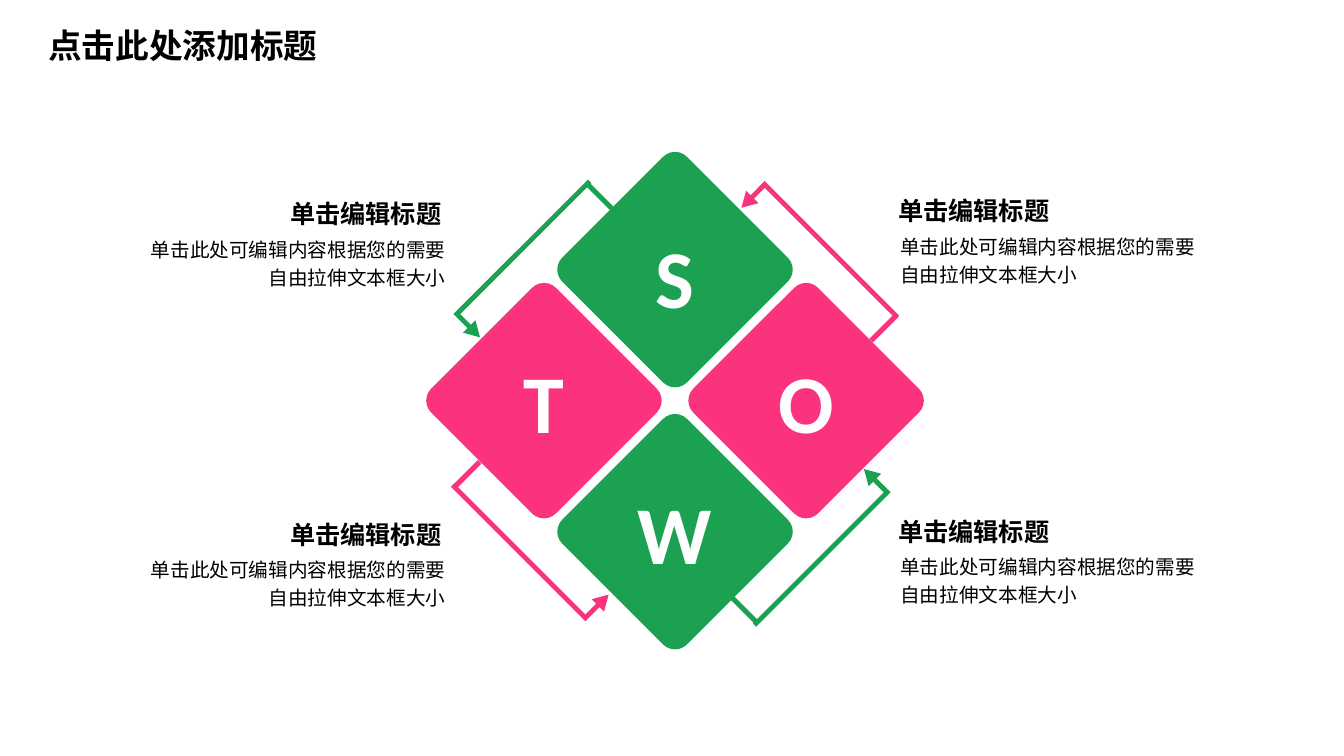
from lxml.etree import SubElement
from pptx import Presentation
from pptx.dml.color import RGBColor
from pptx.enum.shapes import MSO_SHAPE
from pptx.enum.text import MSO_ANCHOR, MSO_AUTO_SIZE, PP_ALIGN
from pptx.oxml.ns import qn
from pptx.util import Inches, Pt

GREEN, PINK, WHITE, BLACK = "1BA151", "FB337F", "FFFFFF", "000000"
CJK = "Noto Sans CJK SC"
SIDE, STEP = 1.75, 1.3


def rgb(value):
    """Turn a hex string into a colour."""
    return RGBColor.from_string(value)


def write(shape, text, size, color=BLACK, bold=False, font=CJK, align=PP_ALIGN.LEFT):
    """Put one formatted paragraph in a shape and return the paragraph."""
    tf = shape.text_frame
    tf.word_wrap = True
    tf.text = text
    p = tf.paragraphs[0]
    p.alignment = align
    r = p.runs[0]
    r.font.size, r.font.bold, r.font.name = Pt(size), bold, font
    r.font.color.rgb = rgb(color)
    SubElement(r.font._element, qn("a:ea")).set("typeface", font)
    return p


def add_textbox(s, box, inset=True):
    """Add a text box, with or without inner margins."""
    tb = s.shapes.add_textbox(*map(Inches, box))
    if not inset:
        tf = tb.text_frame
        tf.margin_left = tf.margin_right = tf.margin_top = tf.margin_bottom = 0
    return tb


def add_turned(s, kind, cx, cy, w, h, angle, color, adjust=(), flip=None):
    """Add a rotated solid shape around a centre point."""
    sp = s.shapes.add_shape(kind, Inches(cx - w / 2), Inches(cy - h / 2), Inches(w), Inches(h))
    sp.rotation = angle
    sp.shadow.inherit = False
    sp.fill.solid()
    sp.fill.fore_color.rgb = rgb(color)
    sp.line.fill.background()
    for i, value in enumerate(adjust):
        sp.adjustments[i] = value
    if flip:
        sp.element.spPr.xfrm.set(flip, "1")


def add_title(s, box):
    """Place the slide title."""
    title = s.shapes.title
    title.left, title.top, title.width, title.height = map(Inches, box)
    write(title, "点击此处添加标题", 24, bold=True)
    title.text_frame.vertical_anchor = MSO_ANCHOR.TOP
    title.text_frame.auto_size = MSO_AUTO_SIZE.NONE


def add_bent_arrow(s, center, tail, angle, flip, color):
    """Draw a bent arrow and its short tail, offset from the centre."""
    cx, cy = center
    add_turned(s, MSO_SHAPE.BENT_ARROW, cx, cy, 0.35, 1.95, angle, color,
               (0.137, 0.25, 0.436, 0), flip)
    add_turned(s, MSO_SHAPE.RECTANGLE, cx + tail[0], cy + tail[1], 0.35, 0.05, angle, color)


def add_diamond(s, cx, cy, letter, drop, color):
    """Draw one rounded diamond with its letter."""
    add_turned(s, MSO_SHAPE.ROUNDED_RECTANGLE, cx, cy, SIDE, SIDE, 45, color, (0.096,))
    tb = add_textbox(s, (cx - 0.4, cy + drop - 0.5, 0.8, 0.99), inset=False)
    p = write(tb, letter, 58.6, WHITE, True, "Calibri", PP_ALIGN.CENTER)
    p.space_before = Pt(6)
    tb.text_frame.word_wrap = False
    tb.text_frame.vertical_anchor = MSO_ANCHOR.MIDDLE


def add_swot(s, cx, cy):
    """Draw the four arrows and four diamonds around a centre point."""
    for dx, dy, tail, angle, flip, color in (
        (-1.41, 1.42, (-0.65, -0.69), 315, "flipV", PINK),
        (-1.43, -1.38, (0.68, -0.65), 45, "flipV", GREEN),
        (1.37, 1.43, (-0.68, 0.65), 45, "flipH", GREEN),
        (1.41, -1.41, (0.66, 0.69), 315, "flipH", PINK),
    ):
        add_bent_arrow(s, (cx + dx, cy + dy), tail, angle, flip, color)
    for letter, col, row, drop, color in (
        ("S", 0, -1, 0.06, GREEN), ("O", 1, 0, 0, PINK),
        ("T", -1, 0, 0, PINK), ("W", 0, 1, 0, GREEN),
    ):
        add_diamond(s, cx + col * STEP, cy + row * STEP, letter, drop, color)


def add_caption(s, head_left, body_left, top, align):
    """Place a caption heading with its text below."""
    head = add_textbox(s, (head_left, top, 1.84, 0.4))
    write(head, "单击编辑标题", 18, bold=True)
    body = add_textbox(s, (body_left, top + 0.39, 3.1, 0.55), inset=False)
    p = write(body, "单击此处可编辑内容根据您的需要自由拉伸文本框大小", 14, align=align)
    p.line_spacing = 1.2
    p.space_after = Pt(6)


def main():
    """Build and save the slide."""
    prs = Presentation()
    prs.slide_width, prs.slide_height = Inches(13.33), Inches(7.5)
    s = prs.slides.add_slide(prs.slide_layouts[5])
    add_swot(s, 6.695, 3.975)
    add_title(s, (0.38, 0.2, 3.78, 0.5))
    for top in (1.92, 5.1):
        add_caption(s, 2.78, 1.32, top, PP_ALIGN.RIGHT)
        add_caption(s, 8.81, 8.93, top - 0.03, PP_ALIGN.LEFT)
    prs.save("out.pptx")


if __name__ == "__main__":
    main()
